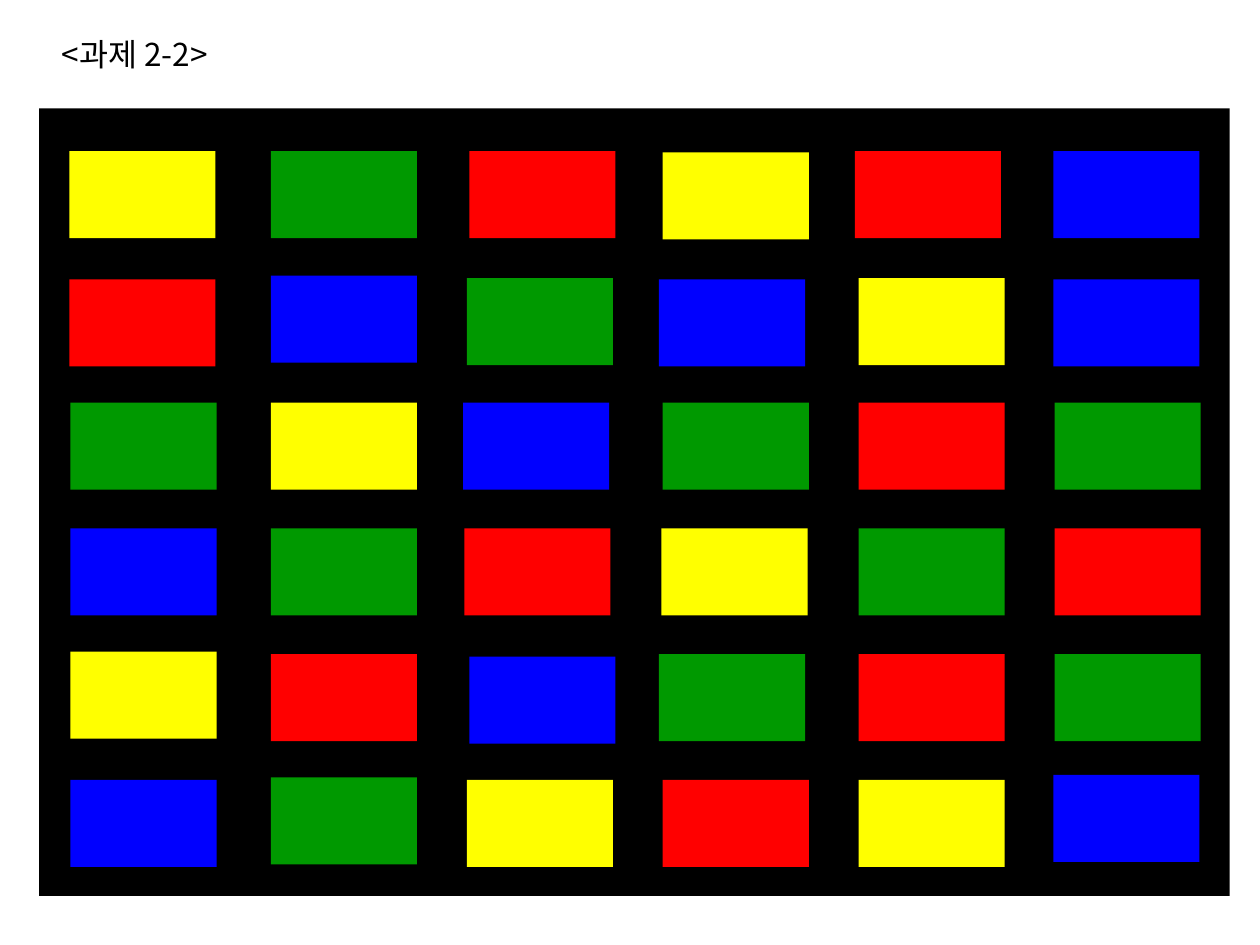
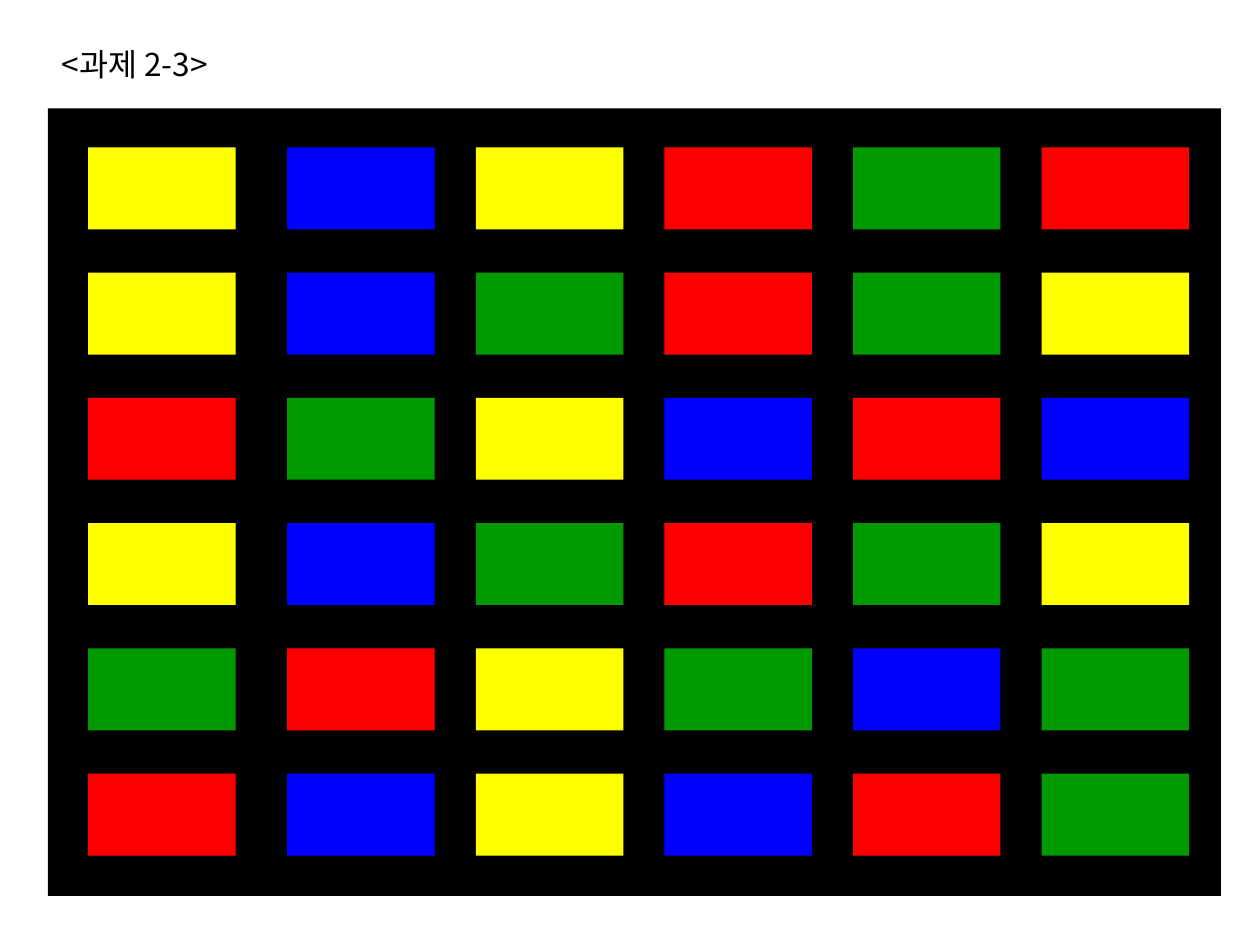
from dataclasses import dataclass, field

from pptx import Presentation
from pptx.dml.color import RGBColor as Rgb
from pptx.enum.shapes import MSO_SHAPE as Kind
from pptx.enum.text import MSO_ANCHOR as Anchor, PP_ALIGN as Align
from pptx.oxml.ns import qn
from pptx.util import Inches, Pt

COLS, ROWS = 100, 75


@dataclass
class Theme:
    """Colours and type shared by the slides."""

    font: str = "Noto Sans CJK KR"
    size: int = 18
    ink: str = "000000"
    paint: dict = field(default_factory=lambda: {
        "Y": "FFFF00", "G": "009900", "R": "FF0000", "B": "0000FF"})


@dataclass
class Task:
    """One board of colour cards, measured in grid columns and rows."""

    title: str
    top: float
    board: tuple
    first: float
    second: float
    step: float
    start: float
    drop: float
    card: tuple
    cards: str
    shift: dict = field(default_factory=dict)


TASKS = [
    Task("<과제 2-2>", 2.3, (3.1, 8.6, 94.5, 62.5),
         first=5.6, second=21.5, step=15.55, start=12, drop=9.98, card=(11.6, 6.9),
         cards="YGRYRB RBGBYB GYBGRG BGRYGR YRBGRG BGYRYB",
         shift={(0, 0): (-0.1, 0), (0, 2): (0.2, 0), (0, 3): (0, 0.1),
                (0, 4): (-0.3, 0), (0, 5): (-0.1, 0),
                (1, 0): (-0.1, 0.2), (1, 1): (0, -0.1), (1, 2): (0, 0.1),
                (1, 3): (-0.3, 0.2), (1, 4): (0, 0.1), (1, 5): (-0.1, 0.2),
                (2, 2): (-0.3, 0), (3, 2): (-0.2, 0), (3, 3): (-0.1, 0),
                (4, 0): (0, -0.2), (4, 2): (0.2, 0.2), (4, 3): (-0.3, 0),
                (5, 1): (0, -0.2), (5, 5): (-0.1, -0.4)}),
    Task("<과제 2-3>", 3.1, (3.8, 8.6, 93.1, 62.5),
         first=7, second=22.8, step=14.97, start=11.7, drop=9.94, card=(11.7, 6.5),
         cards="YBYRGR YBGRGY RGYBRB YBGRGY GRYGBG RBYBRG"),
]


class Deck:
    """Holds the style and the current slide."""

    def __init__(self, theme):
        """Open an empty deck of ten by seven and a half inches."""
        self.theme = theme
        self.show = Presentation()
        self.show.slide_width, self.show.slide_height = Inches(10), Inches(7.5)
        self.page = None

    def place(self, x, y, wide, high):
        """Turn grid columns and rows into slide lengths."""
        col, row = self.show.slide_width / COLS, self.show.slide_height / ROWS
        return [round(n) for n in (x * col, y * row, wide * col, high * row)]

    def start(self):
        """Add a slide with a title only."""
        self.page = self.show.slides.add_slide(self.show.slide_layouts[5])

    def head(self, text, top):
        """Write the task name in the title placeholder."""
        title = self.page.shapes.title
        title.left, title.top, title.width, title.height = self.place(3.9, top, 15.3, 4)
        frame = title.text_frame
        frame.text = text
        frame.word_wrap = False
        frame.vertical_anchor = Anchor.TOP
        line = frame.paragraphs[0]
        line.alignment = Align.LEFT
        for run in line.runs:
            font = run.font
            font.name, font.size = self.theme.font, Pt(self.theme.size)
            font.color.rgb = Rgb.from_string(self.theme.ink)
            east = run._r.get_or_add_rPr().makeelement(
                qn("a:ea"), {"typeface": self.theme.font})
            run._r.rPr.find(qn("a:latin")).addnext(east)

    def box(self, spot, color):
        """Draw a plain filled rectangle."""
        shape = self.page.shapes.add_shape(Kind.RECTANGLE, *self.place(*spot))
        shape.shadow.inherit = False
        shape.fill.solid()
        shape.fill.fore_color.rgb = Rgb.from_string(color)
        shape.line.fill.background()

    def cards(self, task):
        """Lay out the colour cards in rows and columns."""
        for row, names in enumerate(task.cards.split()):
            for col, name in enumerate(names):
                dx, dy = task.shift.get((row, col), (0, 0))
                x = task.second + (col - 1) * task.step if col else task.first
                y = task.start + row * task.drop
                self.box((x + dx, y + dy, *task.card), self.theme.paint[name])


def main():
    """Build every task slide and save the deck."""
    deck = Deck(Theme())
    for task in TASKS:
        deck.start()
        deck.box(task.board, deck.theme.ink)
        deck.cards(task)
        deck.head(task.title, task.top)
    deck.show.save("out.pptx")


if __name__ == "__main__":
    main()
